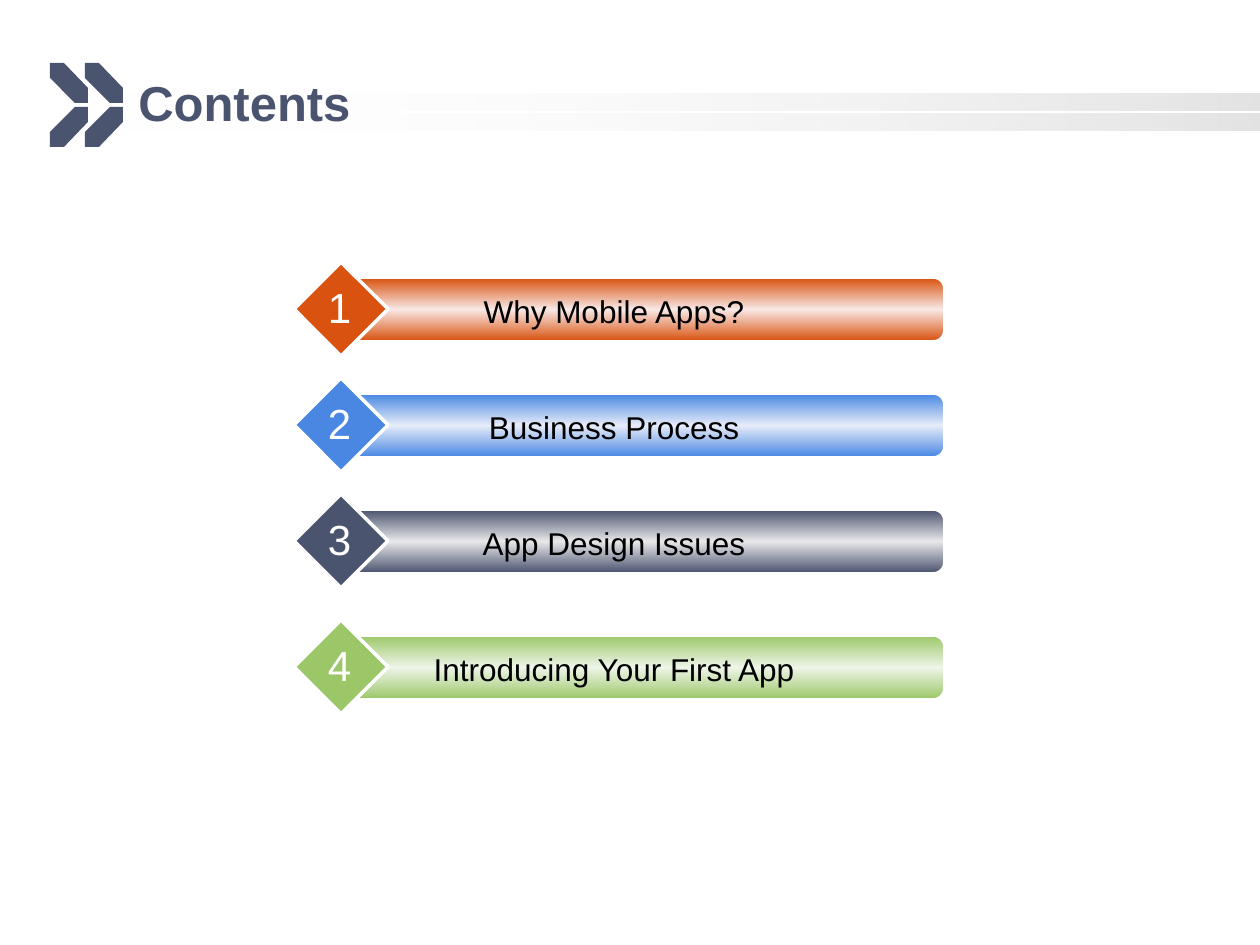
from dataclasses import dataclass

from lxml.etree import SubElement
from pptx import Presentation
from pptx.dml.color import RGBColor
from pptx.enum.shapes import MSO_SHAPE as Shape
from pptx.enum.text import MSO_ANCHOR as Anchor, PP_ALIGN as Align
from pptx.oxml.ns import qn
from pptx.util import Pt

EMU_PER_PX = 914400 / 126


def px(length):
    return round(length * EMU_PER_PX)


@dataclass(frozen=True)
class Theme:
    font: str = "Arial"
    slate: str = "4B546F"
    orange: str = "D9520F"
    blue: str = "4987E3"
    green: str = "9CC769"
    grey: str = "969696"
    white: str = "FFFFFF"
    black: str = "000000"
    title_size: int = 28
    number_size: int = 24
    label_size: int = 18


class SlideBuilder:
    def __init__(self, page, theme):
        self.page = page
        self.theme = theme

    def shape(self, kind, left, top, width, height, line=None):
        shape = self.page.shapes.add_shape(
            kind, px(left), px(top), px(width), px(height))
        self.outline(shape, line)
        return shape

    def outline(self, shape, width=None):
        shape.shadow.inherit = False
        if width is None:
            shape.line.fill.background()
        else:
            shape.line.color.rgb = RGBColor.from_string(self.theme.white)
            shape.line.width = Pt(width)

    def solid(self, shape, color):
        shape.fill.solid()
        shape.fill.fore_color.rgb = RGBColor.from_string(color)

    def gradient(self, shape, angle, stops):
        """Fill with stops given as (percent, color, opacity percent)."""
        shape.fill.gradient()
        shape.fill.gradient_angle = angle
        stop_list = shape.element.spPr.find(".//" + qn("a:gsLst"))
        for old_stop in list(stop_list):
            stop_list.remove(old_stop)
        for position, color, opacity in stops:
            stop = SubElement(stop_list, qn("a:gs"), pos=str(position * 1000))
            tint = SubElement(stop, qn("a:srgbClr"), val=color)
            if opacity < 100:
                SubElement(tint, qn("a:alpha"), val=str(opacity * 1000))

    def outline_shape(self, points, color):
        corners = [(px(x), px(y)) for x, y in points]
        builder = self.page.shapes.build_freeform(*corners[0])
        builder.add_line_segments(corners[1:], close=True)
        shape = builder.convert_to_shape()
        self.outline(shape)
        self.solid(shape, color)

    def text(self, words, left, top, width, height, size, color,
             align=Align.CENTER, anchor=Anchor.TOP, bold=False, wrap=True):
        box = self.page.shapes.add_textbox(
            px(left), px(top), px(width), px(height))
        frame = box.text_frame
        frame.text = words
        frame.word_wrap = wrap
        frame.vertical_anchor = anchor
        para = frame.paragraphs[0]
        para.alignment = align
        span = para.runs[0]
        span.font.name = self.theme.font
        span.font.size = Pt(size)
        span.font.bold = bold
        span.font.color.rgb = RGBColor.from_string(color)

    def header(self, title):
        theme = self.theme
        # Two stripes fading in towards the right edge
        for top in (94, 114):
            stripe = self.shape(Shape.RECTANGLE, 94, top, 1166, 17)
            self.gradient(stripe, 0, [(0, theme.white, 0), (100, theme.grey, 27)])
        # Double chevron: each lower half mirrors the upper one
        upper = [(50, 63), (50, 78), (75, 103), (88, 103), (88, 88), (64, 63)]
        lower = [(x, 210 - y) for x, y in upper]
        for shift in (0, 35):
            for half in (upper, lower):
                self.outline_shape([(x + shift, y) for x, y in half], theme.slate)
        self.text(title, 126, 63, 1040, 78, theme.title_size, theme.slate,
                  Align.LEFT, Anchor.MIDDLE, bold=True)

    def entry(self, number, label, top, color, glow):
        theme = self.theme
        bar = self.shape(Shape.ROUNDED_RECTANGLE, 346, top + 16, 598, 63, line=1)
        bar.adjustments[0] = 0.17
        self.gradient(bar, 270, [(0, color, 100), (50, glow, 100), (100, color, 100)])
        diamond = self.shape(Shape.DIAMOND, 294, top, 94, 94, line=2)
        self.solid(diamond, color)
        self.text(label, 378, top + 24, 472, 50, theme.label_size, theme.black)
        self.text(str(number), 315, top + 13, 49, 63, theme.number_size,
                  theme.white, wrap=False)


def main():
    deck = Presentation()
    deck.slide_width, deck.slide_height = px(1260), px(945)
    theme = Theme()
    slide = SlideBuilder(deck.slides.add_slide(deck.slide_layouts[6]), theme)

    slide.header("Contents")

    # Agenda entries: label, top, color, middle of the gradient
    entries = [
        ("Why Mobile Apps?", 262, theme.orange, "F8E8E6"),
        ("Business Process", 378, theme.blue, "E7ECF9"),
        ("App Design Issues", 494, theme.slate, "E8E8EA"),
        ("Introducing Your First App", 620, theme.green, "EEF5E9"),
    ]
    for number, entry in enumerate(entries, start=1):
        slide.entry(number, *entry)

    deck.save("out.pptx")


if __name__ == "__main__":
    main()
